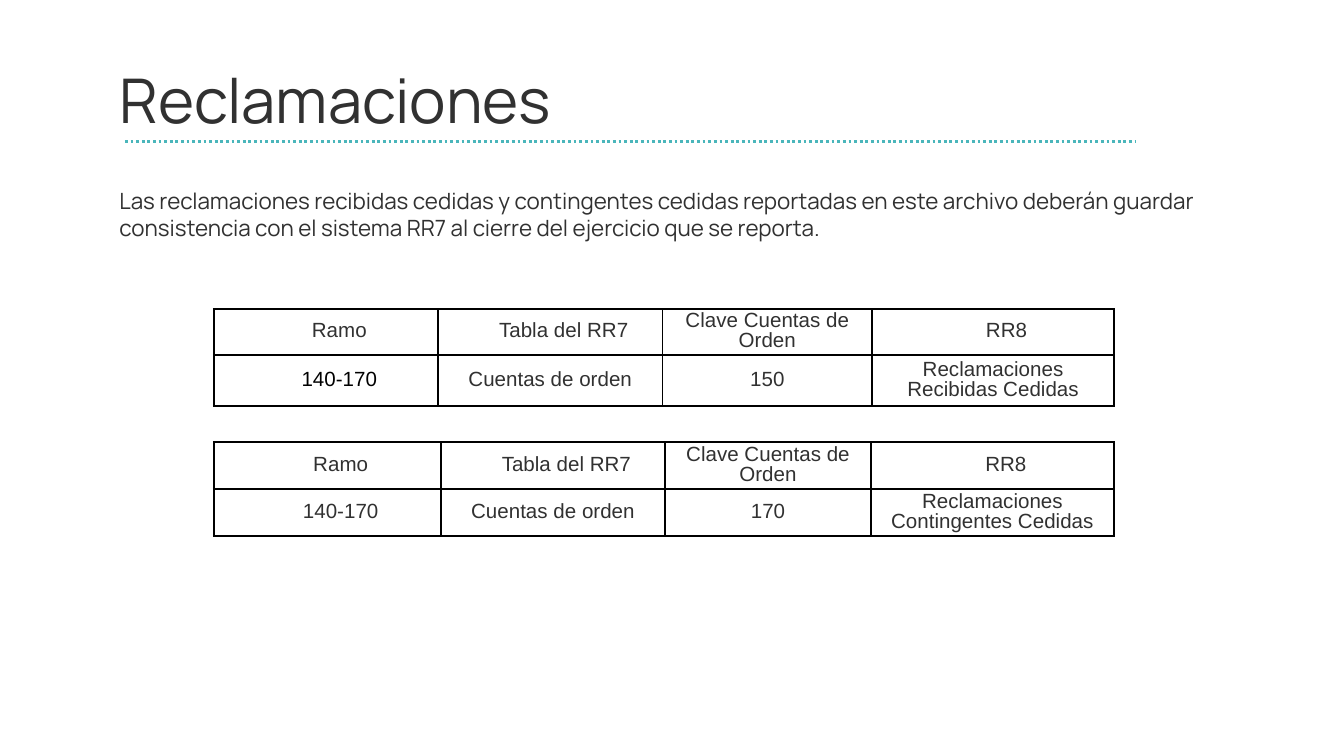
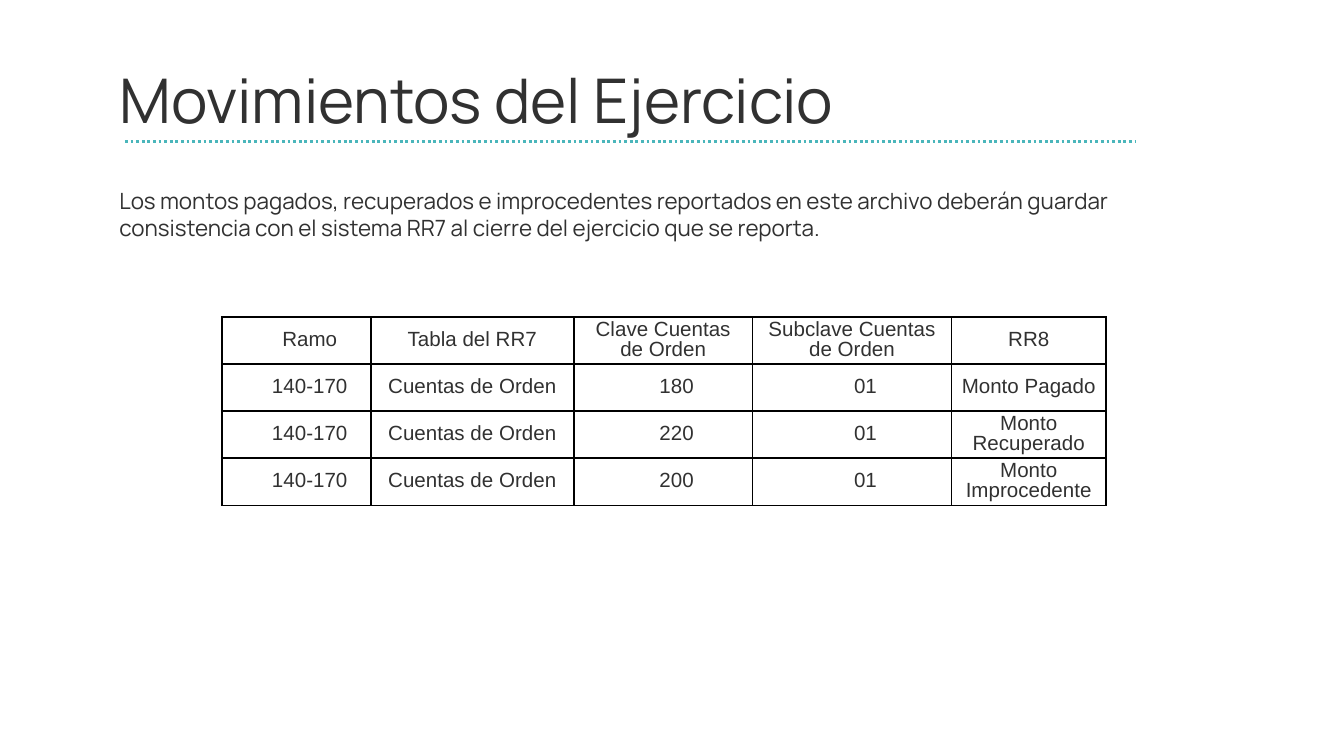
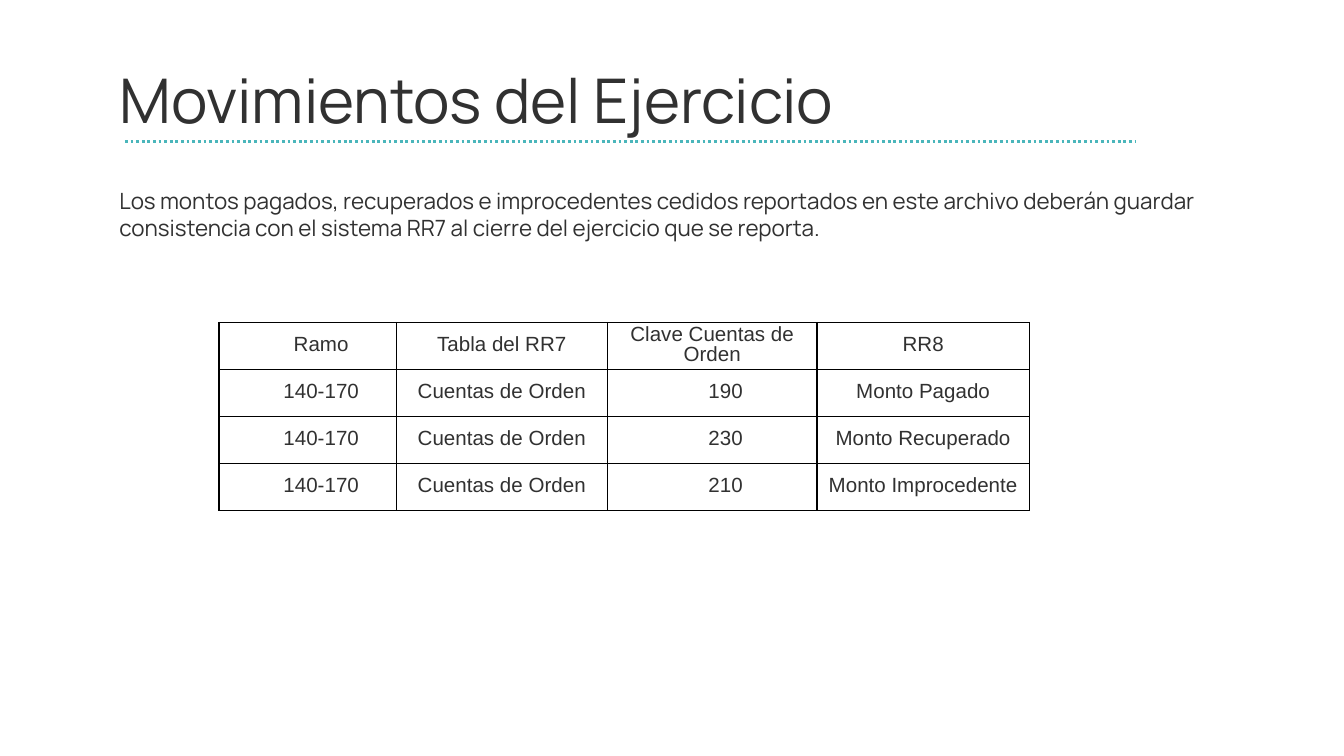
from lxml.etree import SubElement
from pptx import Presentation
from pptx.dml.color import RGBColor as RGB
from pptx.enum.dml import MSO_LINE
from pptx.enum.shapes import MSO_CONNECTOR
from pptx.enum.text import MSO_ANCHOR, PP_ALIGN
from pptx.oxml.ns import qn
from pptx.util import Inches, Pt

COLORS = {
    "ink": "313131",
    "black": "000000",
    "paper": "FFFFFF",
    "rule": "4AB6BB",
}


class Deck:
    text_font = "Manrope"
    table_font = "Arial"

    def __init__(self):
        self.prs = Presentation()
        self.prs.slide_width = Inches(10)
        self.prs.slide_height = Inches(10 * 9 / 16)
        self.slide = None

    def color(self, name):
        return RGB.from_string(COLORS[name])

    def add_slide(self, title, statement):
        """Start a slide with its title, dotted rule and statement."""
        self.slide = self.prs.slides.add_slide(self.prs.slide_layouts[6])
        background = self.slide.background.fill
        background.solid()
        background.fore_color.rgb = self.color("paper")
        self.text(title, 0.42, 6.94, 0.63, 33)
        self.text(statement, 1.17, 8.43, 0.85, 12)
        self.dotted_rule()

    def run(self, paragraph, words, font, size, color="ink"):
        run = paragraph.add_run()
        run.text = words
        run.font.name = font
        run.font.size = Pt(size)
        run.font.color.rgb = self.color(color)

    def text(self, words, top, width, height, size):
        box = self.slide.shapes.add_textbox(
            Inches(0.79), Inches(top), Inches(width), Inches(height))
        frame = box.text_frame
        frame.word_wrap = True
        frame.vertical_anchor = MSO_ANCHOR.MIDDLE
        frame.margin_left = frame.margin_right = Inches(0.1)
        frame.margin_top = frame.margin_bottom = Inches(0.1)
        self.run(frame.paragraphs[0], words, self.text_font, size)

    def dotted_rule(self):
        rule = self.slide.shapes.add_connector(
            MSO_CONNECTOR.STRAIGHT,
            Inches(0.93), Inches(1.05), Inches(8.45), Inches(1.05))
        rule.line.color.rgb = self.color("rule")
        rule.line.width = Pt(1.5)
        rule.line.dash_style = MSO_LINE.ROUND_DOT
        SubElement(rule._element.spPr, qn("a:effectLst"))

    def borders(self, cell):
        properties = cell._tc.get_or_add_tcPr()
        for side in ("a:lnL", "a:lnR", "a:lnT", "a:lnB"):
            line = SubElement(properties, qn(side), w=str(Pt(1)))
            fill = SubElement(line, qn("a:solidFill"))
            SubElement(fill, qn("a:srgbClr"), val=COLORS["black"])

    def cell(self, cell, words, hanging, color):
        self.borders(cell)
        cell.fill.solid()
        cell.fill.fore_color.rgb = self.color("paper")
        cell.vertical_anchor = MSO_ANCHOR.MIDDLE
        cell.margin_left = cell.margin_right = Inches(0.07)
        cell.margin_top = cell.margin_bottom = 0
        paragraph = cell.text_frame.paragraphs[0]
        paragraph.alignment = PP_ALIGN.CENTER
        paragraph.line_spacing = Pt(10.8)
        paragraph.space_after = Pt(6)
        if hanging:
            indent = paragraph._p.get_or_add_pPr()
            indent.set("marL", str(Inches(0.5)))
            indent.set("indent", str(Inches(-0.3)))
        self.run(paragraph, words, self.table_font, 11, color)

    def table(self, left, top, widths, heights, rows, hanging_head,
              hanging_body, black_cells=()):
        """Draw a table; the hanging_ sets name the columns with an indent."""
        frame = self.slide.shapes.add_table(
            len(rows), len(widths), Inches(left), Inches(top),
            Inches(sum(widths)), Inches(sum(heights)))
        table = frame.table
        table.first_row = table.horz_banding = False
        for column, width in zip(table.columns, widths):
            column.width = Inches(width)
        for row, height in zip(table.rows, heights):
            row.height = Inches(height)
        for r, row in enumerate(rows):
            hanging = hanging_body if r else hanging_head
            for c, words in enumerate(row):
                color = "black" if (r, c) in black_cells else "ink"
                self.cell(table.cell(r, c), words, c in hanging, color)


def statement(subject):
    return (f"{subject} en este archivo deberán guardar consistencia con el "
            "sistema RR7 al cierre del ejercicio que se reporta.")


def main():
    deck = Deck()
    branch = "140-170"
    head = ["Ramo", "Tabla del RR7", "Clave Cuentas de Orden", "RR8"]
    amounts = ["Monto Pagado", "Monto Recuperado", "Monto Improcedente"]
    movement_heights = [0.35] * 4

    deck.add_slide("Reclamaciones", statement(
        "Las reclamaciones recibidas cedidas y contingentes cedidas "
        "reportadas"))
    claims = [
        (2.3, [1.67, 1.67, 1.56, 1.8], [0.34, 0.38], "150",
         "Reclamaciones Recibidas Cedidas", {(1, 0)}),
        (3.29, [1.69, 1.67, 1.53, 1.81], [0.35, 0.35], "170",
         "Reclamaciones Contingentes Cedidas", ()),
    ]
    for top, widths, heights, key, claim, black_cells in claims:
        deck.table(1.59, top, widths, heights,
                   [head, [branch, "Cuentas de orden", key, claim]],
                   {0, 1, 3}, {0}, black_cells)

    deck.add_slide("Movimientos del Ejercicio", statement(
        "Los montos pagados, recuperados e improcedentes reportados"))
    subkey_head = head[:3] + ["Subclave Cuentas de Orden"] + head[3:]
    deck.table(1.65, 2.36, [1.11, 1.51, 1.33, 1.48, 1.15], movement_heights,
               [subkey_head] + [
                   [branch, "Cuentas de Orden", key, "01", amount]
                   for key, amount in zip(["180", "220", "200"], amounts)],
               {0}, {0, 2, 3})

    deck.add_slide("Movimientos del Ejercicio", statement(
        "Los montos pagados, recuperados e improcedentes cedidos reportados"))
    deck.table(1.63, 2.4, [1.32, 1.57, 1.56, 1.58], movement_heights,
               [head] + [
                   [branch, "Cuentas de Orden", key, amount]
                   for key, amount in zip(["190", "230", "210"], amounts)],
               {0}, {0, 2})

    deck.prs.save("out.pptx")


if __name__ == "__main__":
    main()
